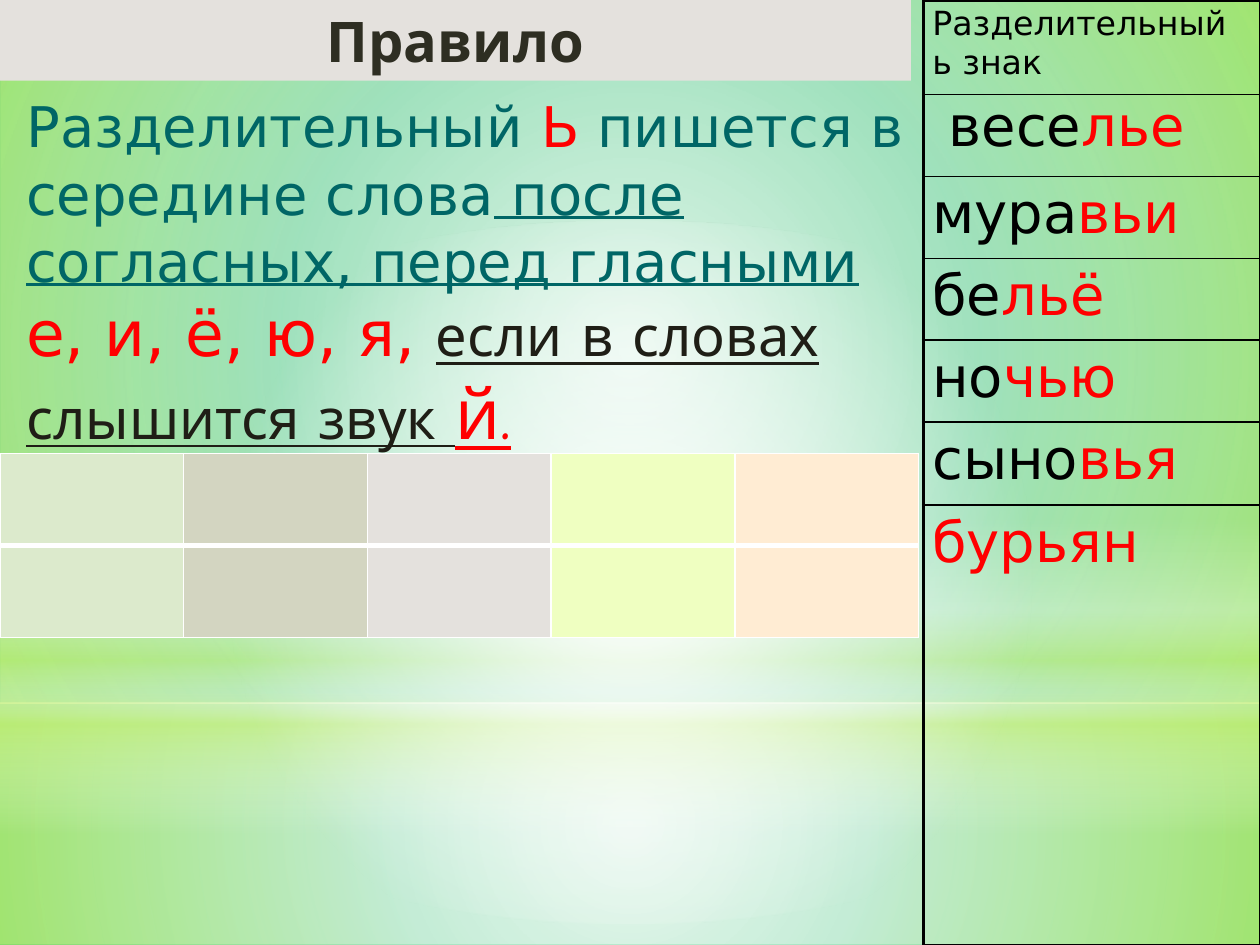
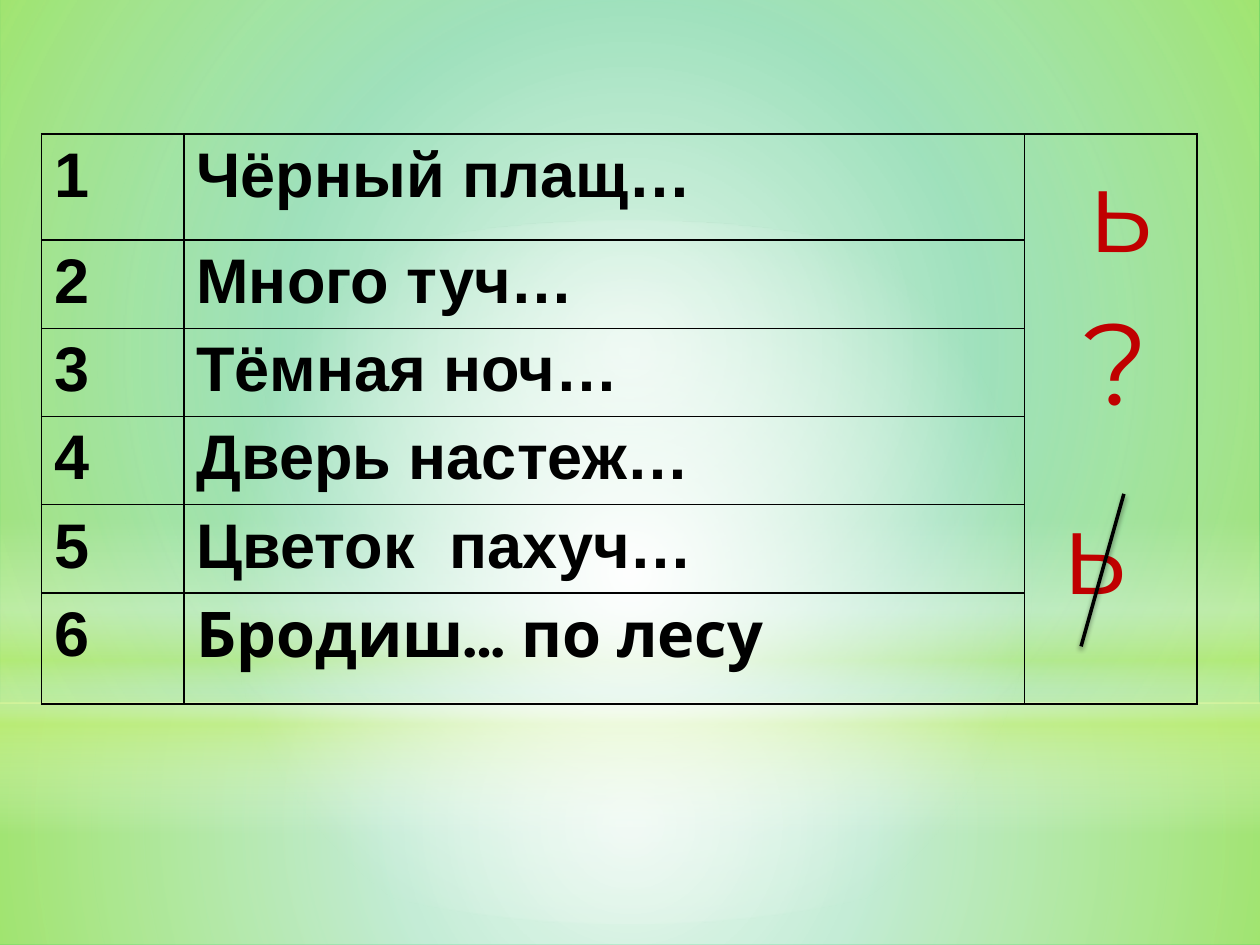
from dataclasses import dataclass, replace

from lxml.etree import SubElement
from pptx import Presentation
from pptx.dml.color import RGBColor
from pptx.enum.shapes import MSO_CONNECTOR, MSO_SHAPE
from pptx.enum.text import MSO_ANCHOR, PP_ALIGN
from pptx.oxml import parse_xml
from pptx.oxml.ns import nsdecls, qn
from pptx.util import Emu, Inches, Pt

BLACK = RGBColor(0x00, 0x00, 0x00)
WHITE = RGBColor(0xFF, 0xFF, 0xFF)
GREEN = RGBColor(0x00, 0xB0, 0x50)
LIME = RGBColor(0xCA, 0xF2, 0x78)
TEAL = RGBColor(0x00, 0x66, 0x66)
RED = RGBColor(0xFF, 0x00, 0x00)
DARK_RED = RGBColor(0xC0, 0x00, 0x00)
INK = RGBColor(0x1F, 0x1E, 0x16)
TITLE_INK = RGBColor(0x2E, 0x2E, 0x22)
SAND = RGBColor(0xE4, 0xE1, 0xDD)
PALETTE = [RGBColor(0xDC, 0xEA, 0xCC), RGBColor(0xD3, 0xD5, 0xC1), SAND,
           RGBColor(0xEF, 0xFF, 0xC1), RGBColor(0xFF, 0xEC, 0xD3)]

GRID_COLUMNS, GRID_ROWS = 100, 75
TITLE_ONLY, BLANK = 5, 6


@dataclass(frozen=True)
class TextStyle:
    font: str
    size: float
    color: RGBColor = BLACK
    bold: bool = False
    underline: bool = False


TITLE = TextStyle("Comic Neue", 32, TITLE_INK, bold=True)
RULE = TextStyle("DejaVu Sans", 32, TEAL)
SOUND = TextStyle("Comic Neue", 32, INK, underline=True)
WORD = TextStyle("DejaVu Sans", 32)
PHRASE = TextStyle("Arial", 36, bold=True)
SIGN = TextStyle("Montserrat", 66, DARK_RED)


class Deck:
    """Holds the presentation, its grid and the slide being filled."""

    def __init__(self):
        self.prs = Presentation()
        self.prs.slide_width, self.prs.slide_height = Inches(10), Inches(7.5)
        self.slide = None

    def add_slide(self, layout):
        self.slide = self.prs.slides.add_slide(self.prs.slide_layouts[layout])

    def x(self, columns):
        return Emu(round(self.prs.slide_width * columns / GRID_COLUMNS))

    def y(self, rows):
        return Emu(round(self.prs.slide_height * rows / GRID_ROWS))

    def box(self, left, top, width, height):
        return self.x(left), self.y(top), self.x(width), self.y(height)

    def add_runs(self, paragraph, *pieces):
        """Fill a paragraph with (text, style) pieces."""
        for text, style in pieces:
            run = paragraph.add_run()
            run.text = text
            font = run.font
            font.name, font.size = style.font, Pt(style.size)
            font.bold, font.underline = style.bold, style.underline
            font.color.rgb = style.color

    def title(self, text, place):
        title = self.slide.shapes.title
        title.left, title.top, title.width, title.height = self.box(*place)
        title.fill.solid()
        title.fill.fore_color.rgb = SAND
        title.text_frame.vertical_anchor = MSO_ANCHOR.MIDDLE
        paragraph = title.text_frame.paragraphs[0]
        paragraph.alignment = PP_ALIGN.CENTER
        self.add_runs(paragraph, (text, TITLE))

    def text(self, place, *pieces, wrap=True):
        frame = self.slide.shapes.add_textbox(*self.box(*place)).text_frame
        frame.word_wrap = wrap
        self.add_runs(frame.paragraphs[0], *pieces)

    def glow(self, kind, place, stops, angle=None):
        """Add a gradient shape to the master; stops are (position, colour, opacity)."""
        shape = self.slide.shapes.add_shape(kind, *self.box(*place))
        shape.shadow.inherit = False
        shape.line.fill.background()
        gradient = parse_xml(f'<a:gradFill {nsdecls("a")} rotWithShape="1"/>')
        stop_list = SubElement(gradient, qn("a:gsLst"))
        for position, color, opacity in stops:
            stop = SubElement(stop_list, qn("a:gs"), pos=str(position * 1000))
            tint = SubElement(stop, qn("a:srgbClr"), val=str(color))
            SubElement(tint, qn("a:alpha"), val=str(opacity * 1000))
        if angle is None:
            circle = SubElement(gradient, qn("a:path"), {"path": "circle"})
            SubElement(circle, qn("a:fillToRect"), l="50000", t="50000", r="50000", b="50000")
        else:
            SubElement(gradient, qn("a:lin"), ang=str(angle * 60000), scaled="0")
        element = shape._element
        element.spPr.find(qn("a:prstGeom")).addnext(gradient)
        tree = self.prs.slide_master.shapes._spTree
        element.nvSpPr.cNvPr.set("id", str(100 + len(tree)))
        tree.append(element)

    def table(self, left, top, widths, heights):
        place = self.box(left, top, sum(widths), sum(heights))
        table = self.slide.shapes.add_table(len(heights), len(widths), *place).table
        table.first_row = table.horz_banding = False
        for column, width in zip(table.columns, widths):
            column.width = self.x(width)
        for row, height in zip(table.rows, heights):
            row.height = self.y(height)
        return table

    def cell(self, cell, color, *pieces, fill=None, margins=(0.1, 0.05, 0.1, 0.05), **sides):
        """Format a cell; sides gives line widths in points for L, R, T, B other than 1."""
        cell.margin_left, cell.margin_top, cell.margin_right, cell.margin_bottom = map(Inches, margins)
        if fill is None:
            cell.fill.background()
        else:
            cell.fill.solid()
            cell.fill.fore_color.rgb = fill
        properties = cell._tc.get_or_add_tcPr()
        for index, side in enumerate("LRTB"):
            width = Pt(sides.get(side, 1))
            properties.insert(index, parse_xml(
                f'<a:ln{side} {nsdecls("a")} w="{width}"><a:solidFill>'
                f'<a:srgbClr val="{color}"/></a:solidFill></a:ln{side}>'))
        paragraph = cell.text_frame.paragraphs[0]
        self.add_runs(paragraph, *pieces)
        return paragraph

    def strike(self, start, end):
        """Draw a black line with a soft shadow."""
        line = self.slide.shapes.add_connector(
            MSO_CONNECTOR.STRAIGHT, self.x(start[0]), self.y(start[1]), self.x(end[0]), self.y(end[1]))
        line.line.color.rgb = BLACK
        line.line.width = Pt(2)
        line._element.spPr.append(parse_xml(
            f'<a:effectLst {nsdecls("a")}><a:outerShdw blurRad="{Pt(3.1)}" dist="{Pt(1.8)}" '
            f'dir="5400000" rotWithShape="0"><a:srgbClr val="{BLACK}"><a:alpha val="45000"/>'
            '</a:srgbClr></a:outerShdw></a:effectLst>'))


def paint_background(deck):
    fill = deck.prs.slide_master.background.fill
    fill.solid()
    fill.fore_color.rgb = GREEN
    horizon = 55.8
    deck.glow(MSO_SHAPE.RECTANGLE, (0, horizon, GRID_COLUMNS, GRID_ROWS - horizon),
              [(0, WHITE, 91), (37, WHITE, 76), (100, LIME, 79)])
    deck.glow(MSO_SHAPE.RECTANGLE, (0, 0, GRID_COLUMNS, horizon),
              [(0, WHITE, 89), (48, WHITE, 62), (100, LIME, 79)])
    deck.glow(MSO_SHAPE.RECTANGLE, (0, 41.2, GRID_COLUMNS, 25),
              [(0, WHITE, 0), (29, WHITE, 30), (45, LIME, 40),
               (55, WHITE, 26), (65, LIME, 60), (100, WHITE, 0)], angle=90)
    deck.glow(MSO_SHAPE.OVAL, (0, 17.5, GRID_COLUMNS, horizon),
              [(0, WHITE, 100), (56, WHITE, 0)])


def fill_rule_slide(deck):
    swatches = deck.table(0, 36, [14.58] * len(PALETTE), [7.3] * 2)
    for column, color in enumerate(PALETTE):
        deck.cell(swatches.cell(0, column), WHITE, fill=color, B=3)
        deck.cell(swatches.cell(1, column), WHITE, fill=color, T=3)

    red_rule = replace(RULE, color=RED)
    deck.text((1.1, 6.8, 73.8, 42.9),
              ("Разделительный ", RULE), ("Ь", red_rule),
              (" пишется в середине слова", RULE),
              (" после согласных, перед гласными ", replace(RULE, underline=True)),
              ("е, и, ё, ю, я, ", replace(red_rule, size=36)),
              ("если в словах слышится звук\u00a0", SOUND),
              ("й.", replace(SOUND, size=40, color=RED)))

    words = [("весе", "лье"), ("мура", "вьи"), ("бе", "льё"),
             ("но", "чью"), ("сыно", "вья"), ("", "бурьян")]
    heights = [7.5, 6.5, 6.5, 6.5, 6.5, 6.6]
    heights.append(GRID_ROWS - sum(heights))
    examples = deck.table(73.3, 0, [26.7], heights)
    margins = (0.07, 0.04, 0.07, 0.04)
    deck.cell(examples.cell(0, 0), BLACK, ("Разделительный ь знак", replace(WORD, size=19)),
              margins=margins, L=2.25, T=2.25)
    for row, (stem, ending) in enumerate(words, 1):
        pieces = [(stem, WORD)] if stem else []
        deck.cell(examples.cell(row, 0), BLACK, *pieces, (ending, replace(WORD, color=RED)),
                  margins=(0.2, 0, 0, 0) if row == 1 else margins, L=2.25)

    deck.title("Правило", (0, 0, 72.3, 6.4))


def fill_exercise_slide(deck):
    phrases = ["Чёрный плащ…", "Много туч…", "Тёмная ноч…", "Дверь настеж…",
               "Цветок  пахуч…", "Бродиш… по лесу"]
    exercise = deck.table(3.3, 10.65, [11.3, 66.7, 13.7], [8.4, 6.7, 6.7, 6.7, 6.7, 8.8])
    last = len(phrases) - 1
    for row, phrase in enumerate(phrases):
        phrase_style = replace(PHRASE, font="Karla") if row == last else PHRASE
        entries = [(str(row + 1), PHRASE), (phrase, phrase_style)]
        for column, entry in enumerate(entries):
            paragraph = deck.cell(exercise.cell(row, column), BLACK, entry)
            paragraph.alignment = PP_ALIGN.JUSTIFY
            indents = paragraph._p.get_or_add_pPr()
            indents.set("marL", str(Inches(0.38)))
            indents.set("indent", str(-Inches(0.38)))
        deck.cell(exercise.cell(row, 2), BLACK)
    exercise.cell(0, 2).merge(exercise.cell(last, 2))

    deck.text((85.3, 10.4, 7.8, 12.1), ("ь", SIGN), wrap=False)
    deck.text((83.3, 37.5, 7.8, 12.1), ("ь", SIGN))
    deck.text((85, 22.5, 7.7, 12.1), ("?", SIGN), wrap=False)
    deck.strike((89.2, 39.2), (85.8, 51.3))


def main():
    deck = Deck()
    deck.add_slide(TITLE_ONLY)
    paint_background(deck)
    fill_rule_slide(deck)
    deck.add_slide(BLANK)
    fill_exercise_slide(deck)
    deck.prs.save("out.pptx")


if __name__ == "__main__":
    main()
